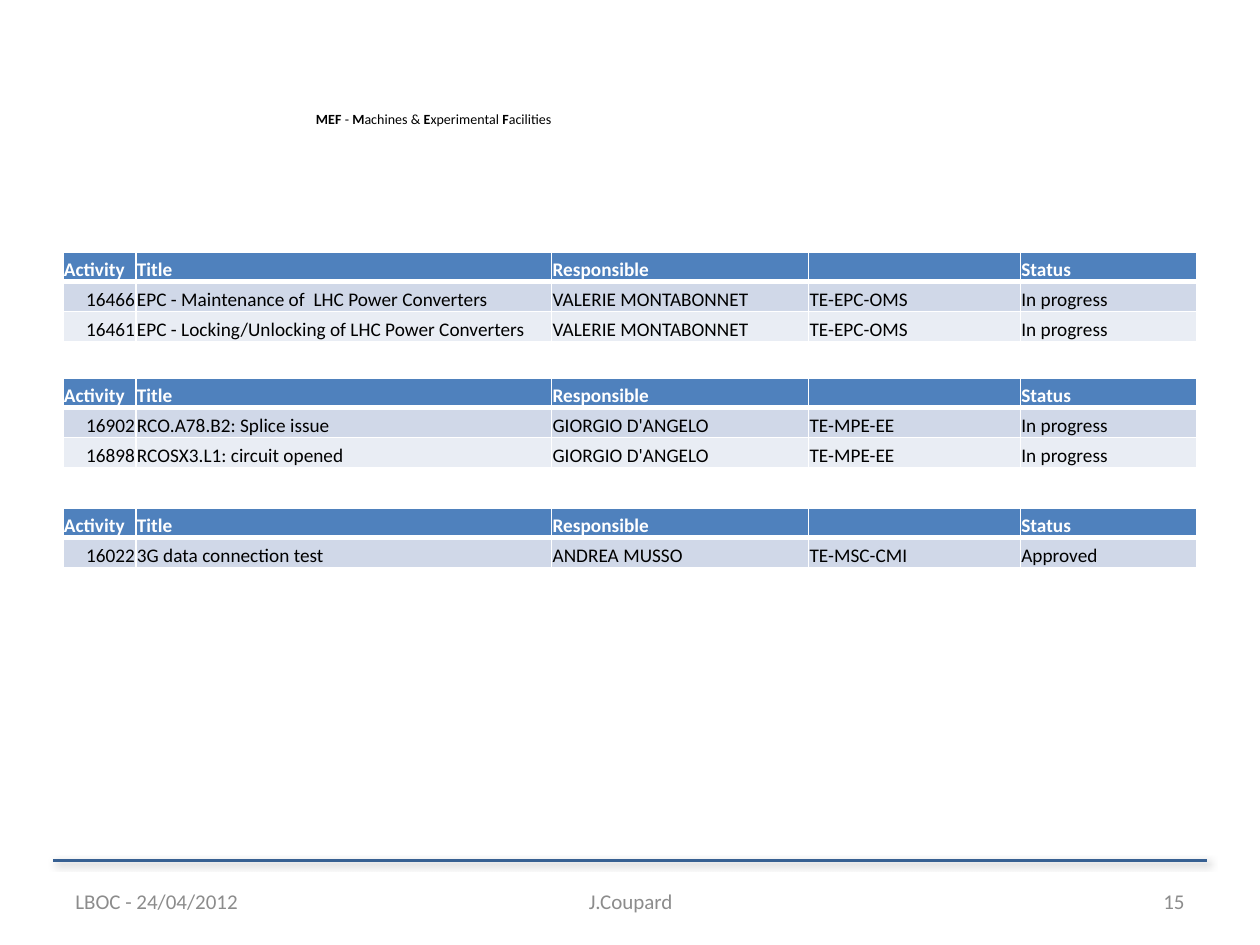
from lxml.etree import SubElement
from pptx import Presentation
from pptx.dml.color import RGBColor
from pptx.enum.shapes import MSO_CONNECTOR
from pptx.enum.text import MSO_ANCHOR, PP_ALIGN
from pptx.oxml import parse_xml
from pptx.oxml.ns import nsdecls, qn
from pptx.util import Cm, Pt

HEADER = ("Activity", "Title", "Responsible", "", "Status")
COLUMN_WIDTHS = (1.47, 8.38, 5.18, 4.27, 3.56)
ROW_HEIGHT = 0.6
TABLES = (
    (5.08, (
        ("16466", "EPC - Maintenance of  LHC Power Converters",
         "VALERIE MONTABONNET", "TE-EPC-OMS", "In progress"),
        ("16461", "EPC - Locking/Unlocking of LHC Power Converters",
         "VALERIE MONTABONNET", "TE-EPC-OMS", "In progress"),
    )),
    (7.62, (
        ("16902", "RCO.A78.B2: Splice issue",
         "GIORGIO D'ANGELO", "TE-MPE-EE", "In progress"),
        ("16898", "RCOSX3.L1: circuit opened",
         "GIORGIO D'ANGELO", "TE-MPE-EE", "In progress"),
    )),
    (10.24, (
        ("16022", "3G data connection test",
         "ANDREA MUSSO", "TE-MSC-CMI", "Approved"),
    )),
)
FOOTERS = (
    (1.27, 5.92, "LBOC - 24/04/2012", PP_ALIGN.LEFT),
    (8.69, 8.05, "J.Coupard", PP_ALIGN.CENTER),
    (18.21, 5.92, "15", PP_ALIGN.RIGHT),
)
FACILITIES = (
    ("MEF ", True), ("- ", False), ("M", True), ("achines & ", False),
    ("E", True), ("xperimental ", False), ("F", True), ("acilities", False),
)


def color(value):
    return RGBColor.from_string(value)


class SlideBuilder:
    font_name = "Calibri"
    black = "000000"
    white = "FFFFFF"
    gray = "8C8C8C"
    rule_blue = "376092"
    header_blue = "4F81BD"
    bands = ("D0D8E8", "E9EDF4")
    table_size = 11

    def __init__(self, slide):
        self.slide = slide

    def format_span(self, span, size, tone, bold=False):
        span.font.name = self.font_name
        span.font.size = Pt(size)
        span.font.bold = bold
        span.font.color.rgb = color(tone)

    def text(self, left, top, width, height, spans, size, tone,
             align=PP_ALIGN.LEFT, anchor=MSO_ANCHOR.TOP, wrap=True):
        box = self.slide.shapes.add_textbox(Cm(left), Cm(top), Cm(width), Cm(height))
        frame = box.text_frame
        frame.word_wrap = wrap
        frame.vertical_anchor = anchor
        para = frame.paragraphs[0]
        para.alignment = align
        for wording, bold in spans:
            span = para.add_run()
            span.text = wording
            self.format_span(span, size, tone, bold)

    def rule(self, left, right, top):
        line = self.slide.shapes.add_connector(
            MSO_CONNECTOR.STRAIGHT, Cm(left), Cm(top), Cm(right), Cm(top))
        line.line.color.rgb = color(self.rule_blue)
        line.line.width = Pt(1.5)
        line._element.spPr.append(parse_xml(
            f'<a:effectLst {nsdecls("a")}>'
            f'<a:outerShdw blurRad="{Pt(4)}" dist="{Pt(2)}" dir="2700000" algn="tl" rotWithShape="0">'
            f'<a:srgbClr val="{self.black}"><a:alpha val="40000"/></a:srgbClr>'
            '</a:outerShdw></a:effectLst>'))

    def borders(self, cell, bottom_width):
        properties = cell._tc.get_or_add_tcPr()
        for side, width in (("L", 1), ("R", 1), ("T", 1), ("B", bottom_width)):
            properties.append(parse_xml(
                f'<a:ln{side} {nsdecls("a")} w="{Pt(width)}"><a:solidFill>'
                f'<a:srgbClr val="{self.white}"/></a:solidFill></a:ln{side}>'))

    def cell(self, cell, wording, fill, tone, is_header, align):
        self.borders(cell, 3 if is_header else 1)
        cell.fill.solid()
        cell.fill.fore_color.rgb = color(fill)
        cell.vertical_anchor = MSO_ANCHOR.BOTTOM
        cell.margin_left = cell.margin_right = cell.margin_top = Cm(0.02)
        cell.margin_bottom = 0
        para = cell.text_frame.paragraphs[0]
        para.alignment = align
        if wording:
            para.text = wording
            self.format_span(para.runs[0], self.table_size, tone, is_header)
        else:
            SubElement(para._p, qn("a:endParaRPr")).set("sz", str(self.table_size * 100))

    def table(self, left, top, rows):
        all_rows = (HEADER, *rows)
        table = self.slide.shapes.add_table(
            len(all_rows), len(HEADER), Cm(left), Cm(top),
            Cm(sum(COLUMN_WIDTHS)), Cm(ROW_HEIGHT * len(all_rows))).table
        for column, width in zip(table.columns, COLUMN_WIDTHS):
            column.width = Cm(width)
        for row_index, row in enumerate(all_rows):
            table.rows[row_index].height = Cm(ROW_HEIGHT)
            is_header = row_index == 0
            fill = self.header_blue if is_header else self.bands[(row_index - 1) % 2]
            tone = self.white if is_header else self.black
            for column_index, wording in enumerate(row):
                is_number = column_index == 0 and not is_header
                align = PP_ALIGN.RIGHT if is_number else PP_ALIGN.LEFT
                self.cell(table.cell(row_index, column_index), wording,
                          fill, tone, is_header, align)


def main():
    deck = Presentation()
    deck.slide_width, deck.slide_height = Cm(25.4), Cm(19.05)
    page = SlideBuilder(deck.slides.add_slide(deck.slide_layouts[6]))
    page.rule(1.07, 24.33, 17.35)
    page.text(6.12, 2.11, 5.31, 0.6, FACILITIES, 8, page.black, wrap=False)
    for left, width, wording, align in FOOTERS:
        page.text(left, 17.65, width, 1.02, [(wording, False)], 12, page.gray,
                  align, MSO_ANCHOR.MIDDLE)
    for top, rows in TABLES:
        page.table(1.27, top, rows)
    deck.save("out.pptx")


if __name__ == "__main__":
    main()
